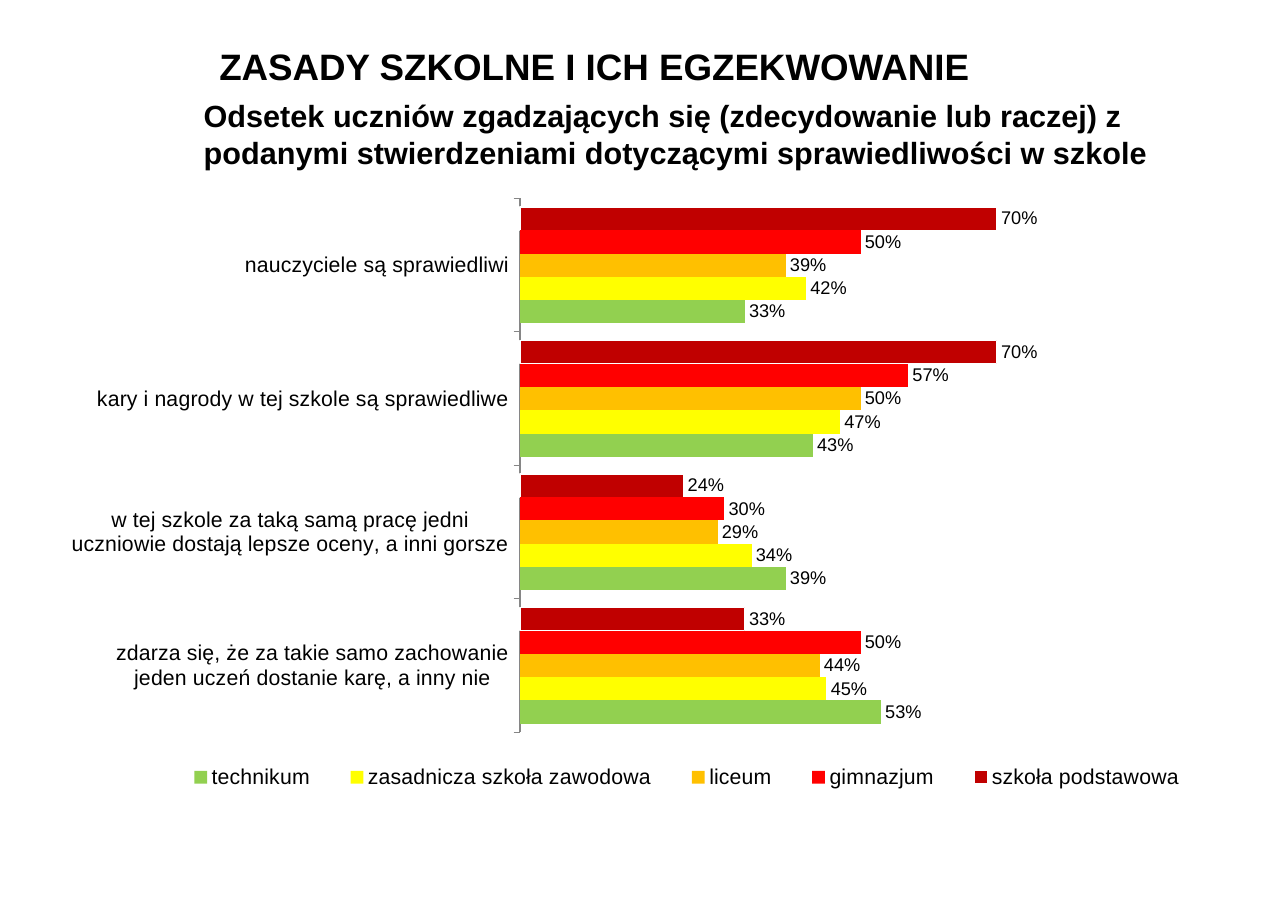
from dataclasses import dataclass

from lxml.etree import SubElement
from pptx import Presentation
from pptx.chart.chart import Chart
from pptx.chart.data import CategoryChartData
from pptx.dml.color import RGBColor
from pptx.enum.chart import (
    XL_CHART_TYPE as ChartType,
    XL_LABEL_POSITION as LabelPosition,
    XL_LEGEND_POSITION as LegendPosition,
    XL_TICK_MARK as TickMark,
)
from pptx.enum.text import MSO_ANCHOR as Anchor, PP_ALIGN as Align
from pptx.oxml.ns import qn
from pptx.slide import Slide
from pptx.text.text import Font, TextFrame
from pptx.util import Inches, Pt

COLORS = {
    "black": "000000",
    "white": "FFFFFF",
    "axis": "868686",
    "dark red": "C00000",
    "red": "FF0000",
    "orange": "FFC000",
    "yellow": "FFFF00",
    "green": "92D050",
}
PERCENT = "#,##0%"
STATEMENTS = [
    "nauczyciele są sprawiedliwi",
    "kary i nagrody w tej szkole są sprawiedliwe",
    "w tej szkole za taką samą pracę jedni uczniowie dostają lepsze oceny, a inni gorsze",
    "zdarza się, że za takie samo zachowanie jeden uczeń dostanie karę, a inny nie",
]


@dataclass
class SchoolType:
    name: str
    color: str
    shares: tuple[float, ...]


SCHOOL_TYPES = [
    SchoolType("szkoła podstawowa", "dark red", (0.7, 0.7, 0.24, 0.33)),
    SchoolType("gimnazjum", "red", (0.5, 0.57, 0.3, 0.5)),
    SchoolType("liceum", "orange", (0.39, 0.5, 0.29, 0.44)),
    SchoolType("zasadnicza szkoła zawodowa", "yellow", (0.42, 0.47, 0.34, 0.45)),
    SchoolType("technikum", "green", (0.33, 0.43, 0.39, 0.53)),
]


def rgb(name: str) -> RGBColor:
    return RGBColor.from_string(COLORS[name])


def format_font(font: Font, size: float, bold: bool = False) -> None:
    font.name = "Arial"
    font.size = Pt(size)
    font.bold = bold
    font.color.rgb = rgb("black")


def write_text(frame: TextFrame, text: str, *, size: float, bold: bool = True,
               anchor: Anchor = Anchor.TOP) -> None:
    frame.word_wrap = True
    frame.vertical_anchor = anchor
    paragraph = frame.paragraphs[0]
    paragraph.alignment = Align.LEFT
    run = paragraph.add_run()
    run.text = text
    format_font(run.font, size, bold)


def set_layout(chart: Chart, part: str, index: int, box: tuple[float, ...],
               inner: bool = False) -> None:
    parent = chart.element.find(".//" + qn(f"c:{part}"))
    for old_layout in parent.findall(qn("c:layout")):
        parent.remove(old_layout)
    layout = SubElement(parent, qn("c:layout"))
    parent.insert(index, layout)
    manual = SubElement(layout, qn("c:manualLayout"))
    settings = [("layoutTarget", "inner")] if inner else []
    settings += [("xMode", "edge"), ("yMode", "edge"), *zip("xywh", box)]
    for tag, value in settings:
        SubElement(manual, qn(f"c:{tag}")).set("val", str(value))


def add_shares_chart(slide: Slide) -> None:
    data = CategoryChartData(number_format=PERCENT)
    data.categories = STATEMENTS
    for school in SCHOOL_TYPES:
        data.add_series(school.name, school.shares)
    chart = slide.shapes.add_chart(
        ChartType.BAR_CLUSTERED, Inches(0.65), Inches(1.69),
        Inches(10.46), Inches(5.59), data).chart
    format_font(chart.font, 18)
    chart.has_title = False

    statement_axis = chart.category_axis
    statement_axis.reverse_order = True
    statement_axis.major_tick_mark = TickMark.OUTSIDE
    statement_axis.format.line.color.rgb = rgb("axis")
    format_font(statement_axis.tick_labels.font, 14)
    share_axis = chart.value_axis
    share_axis.minimum_scale = 0
    share_axis.maximum_scale = 1
    share_axis.has_major_gridlines = False
    share_axis.visible = False

    plot = chart.plots[0]
    plot.gap_width = 74
    plot.overlap = 0
    plot.vary_by_categories = False
    for school, series in zip(SCHOOL_TYPES, plot.series):
        series.format.fill.solid()
        series.format.fill.fore_color.rgb = rgb(school.color)
        series.format.line.fill.background()
        labels = series.data_labels
        labels.show_value = True
        labels.number_format = PERCENT
        labels.number_format_is_linked = False
        labels.position = LabelPosition.OUTSIDE_END
        format_font(labels.font, 12)
    primary_line = plot.series[0].format.line
    primary_line.color.rgb = rgb("white")
    primary_line.width = Pt(0.75)

    chart.has_legend = True
    chart.legend.position = LegendPosition.BOTTOM
    chart.legend.include_in_layout = False
    format_font(chart.legend.font, 14)
    set_layout(chart, "plotArea", 0, (0.384, 0.02, 0.596, 0.867), inner=True)
    set_layout(chart, "legend", 1, (0.07, 0.93, 0.92, 0.06))


def main() -> None:
    presentation = Presentation()
    presentation.slide_width = Inches(11.69)
    presentation.slide_height = Inches(8.27)
    slide = presentation.slides.add_slide(presentation.slide_layouts[5])

    title = slide.shapes.title
    title.left, title.top = Inches(1.99), Inches(0.35)
    title.width, title.height = Inches(9.12), Inches(0.49)
    frame = title.text_frame
    frame.margin_left = frame.margin_right = frame.margin_top = frame.margin_bottom = 0
    write_text(frame, "ZASADY SZKOLNE I ICH EGZEKWOWANIE", size=24, anchor=Anchor.MIDDLE)

    subtitle = slide.shapes.add_textbox(
        Inches(1.75), Inches(0.83), Inches(9.45), Inches(0.77))
    write_text(
        subtitle.text_frame,
        "Odsetek uczniów zgadzających się (zdecydowanie lub raczej) z podanymi "
        "stwierdzeniami dotyczącymi sprawiedliwości w szkole",
        size=20)
    add_shares_chart(slide)
    presentation.save("out.pptx")


if __name__ == "__main__":
    main()
